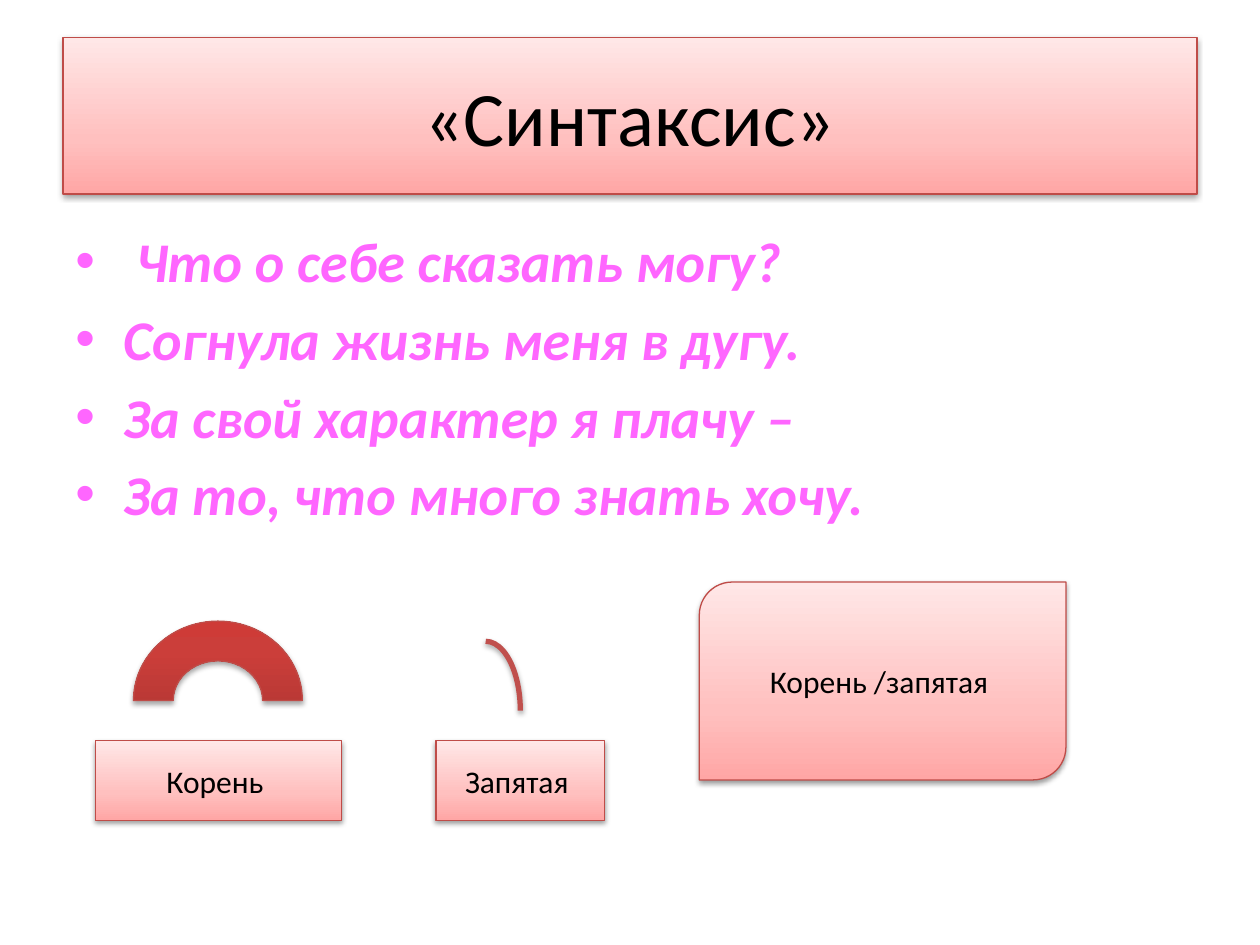
from lxml import etree
from pptx import Presentation
from pptx.dml.color import RGBColor
from pptx.enum.shapes import MSO_SHAPE as Shape
from pptx.enum.text import MSO_ANCHOR as Anchor, PP_ALIGN as Align
from pptx.oxml.ns import qn
from pptx.util import Inches, Pt

COLORS = {"outline": "BF4C48", "arc": "C0504D", "text": "000000",
          "verse": "FF66FF", "shadow": "000000"}
PALE = [(0, "FFA6A5"), (35, "FFC0BF"), (100, "FFE7E7")]
STRONG = [(0, "9C2F2D"), (80, "CB3E3A"), (100, "CE3B37")]
FONT = "Calibri"

VERSE = [" Что о себе сказать могу?", "Согнула жизнь меня в дугу.",
         "За свой характер я плачу –", "За то, что много знать хочу."]
VERSE_AREA = (0.5, 1.75, 9, 4.95)

PANELS = [
    (Shape.RECTANGLE, (0.5, 0.3, 9, 1.24), "«Синтаксис»", 44),
    (Shape.ROUND_2_DIAG_RECTANGLE, (5.55, 4.62, 2.91, 1.57), "Корень /запятая ", 18),
    (Shape.FLOWCHART_PROCESS, (0.76, 5.88, 1.95, 0.63), "Корень ", 18),
    (Shape.FLOWCHART_PROCESS, (3.46, 5.88, 1.34, 0.63), "Запятая ", 18),
]
ROOT_SIGN = (1.06, 4.93, 1.34, 1.26)
COMMA_SIGN = (3.58, 5.09, 0.55, 1.1)


def rgb(name):
    return RGBColor.from_string(COLORS[name])


def add(parent, tag, **attributes):
    return etree.SubElement(parent, qn(tag), attributes)


def add_color(parent, value, **attributes):
    return add(parent, "a:srgbClr", val=value, **attributes)


def add_figure(page, kind, area, stops, line="outline", width=0.75, alpha=35, distance=1.8):
    figure = page.shapes.add_shape(kind, *map(Inches, area))
    if stops:
        figure.fill.gradient()
        figure.fill.gradient_angle = 90
        stop_list = figure.element.spPr.find(".//" + qn("a:gsLst"))
        for old in list(stop_list):
            stop_list.remove(old)
        for position, color in stops:
            add_color(add(stop_list, "a:gs", pos=str(position * 1000)), color)
    else:
        figure.fill.background()
    figure.line.color.rgb = rgb(line)
    figure.line.width = Pt(width)
    figure.shadow.inherit = False
    effects = figure.element.spPr.find(qn("a:effectLst"))
    shadow = add(effects, "a:outerShdw", blurRad=str(Pt(3.1)), dist=str(Pt(distance)),
                 dir="5400000", rotWithShape="0")
    add(add_color(shadow, COLORS["shadow"]), "a:alpha", val=str(alpha * 1000))
    return figure


def style(para, size, color, emphasis=False):
    for span in para.runs:
        span.font.name = FONT
        span.font.size = Pt(size)
        span.font.color.rgb = rgb(color)
        span.font.bold = span.font.italic = emphasis


def add_panel(page, kind, area, text, size):
    frame = add_figure(page, kind, area, PALE, alpha=38, distance=1.6).text_frame
    frame.word_wrap = True
    frame.vertical_anchor = Anchor.MIDDLE
    frame.text = text
    para = frame.paragraphs[0]
    para.alignment = Align.CENTER
    style(para, size, "text")


def add_verse(page):
    frame = page.shapes.add_textbox(*map(Inches, VERSE_AREA)).text_frame
    frame.word_wrap = True
    frame.text = "\n".join(VERSE)
    for para in frame.paragraphs:
        para.space_before = Pt(6)
        style(para, 32, "verse", emphasis=True)
        properties = para._p.get_or_add_pPr()
        properties.set("marL", str(Inches(0.38)))
        properties.set("indent", str(-Inches(0.38)))
        add(properties, "a:buFont", typeface="Arial")
        add(properties, "a:buChar", char="•")


def main():
    deck = Presentation()
    deck.slide_width, deck.slide_height = Inches(10), Inches(7.5)
    page = deck.slides.add_slide(deck.slide_layouts[6])
    title, answer, *captions = PANELS
    add_panel(page, *title)
    add_verse(page)
    add_panel(page, *answer)
    add_figure(page, Shape.BLOCK_ARC, ROOT_SIGN, STRONG)
    add_figure(page, Shape.ARC, COMMA_SIGN, None, line="arc", width=3)
    for caption in captions:
        add_panel(page, *caption)
    deck.save("out.pptx")


if __name__ == "__main__":
    main()
